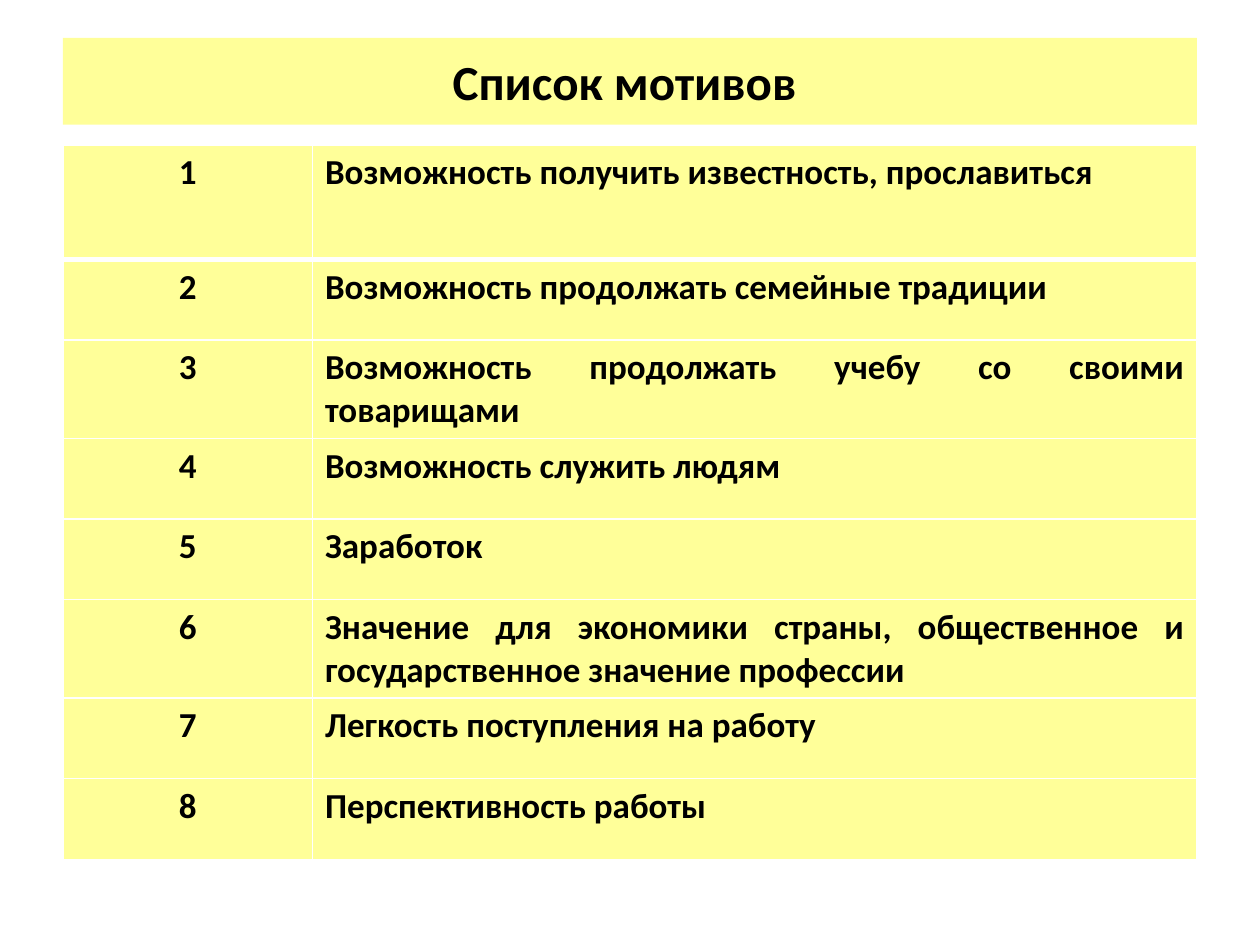
from typing import NamedTuple

from lxml.etree import SubElement
from pptx import Presentation
from pptx.dml.color import RGBColor
from pptx.enum.shapes import MSO_SHAPE
from pptx.enum.text import MSO_ANCHOR, PP_ALIGN
from pptx.oxml.ns import qn
from pptx.util import Inches, Pt

YELLOW = RGBColor(0xFF, 0xFF, 0x99)
WHITE = RGBColor(0xFF, 0xFF, 0xFF)
BLACK = RGBColor(0, 0, 0)
FONT = "Calibri"
LEFT, WIDTH = 0.5, 9
COLS = (1.98, 7.02)
FIRST, REST = 0.91, 0.64


class Motive(NamedTuple):
    rank: int
    text: str


MOTIVES = [Motive(*pair) for pair in enumerate((
    "Возможность получить известность, прославиться",
    "Возможность продолжать семейные традиции",
    "Возможность продолжать учебу со своими товарищами",
    "Возможность служить людям",
    "Заработок",
    "Значение для экономики страны, общественное и государственное значение профессии",
    "Легкость поступления на работу",
    "Перспективность работы",
), start=1)]


def write(frame, text: str, size: int, align) -> None:
    frame.text = text
    para = frame.paragraphs[0]
    para.alignment = align
    font = para.runs[0].font
    font.name, font.size, font.bold = FONT, Pt(size), True
    font.color.rgb = BLACK


def edge(cell, widths: dict[str, float]) -> None:
    props = cell._tc.get_or_add_tcPr()
    for side, width in widths.items():
        line = SubElement(props, qn(f"a:ln{side}"), w=str(Pt(width)))
        fill = SubElement(line, qn("a:solidFill"))
        SubElement(fill, qn("a:srgbClr"), val=str(WHITE))


def fill_cell(cell, text: str, align, top: float, base: float) -> None:
    write(cell.text_frame, text, 20, align)
    edge(cell, {"L": 1, "R": 1, "T": top, "B": base})
    cell.fill.solid()
    cell.fill.fore_color.rgb = YELLOW


def add_title(slide, text: str) -> None:
    box = slide.shapes.add_shape(
        MSO_SHAPE.RECTANGLE, Inches(LEFT), Inches(0.3), Inches(WIDTH), Inches(0.69))
    box.shadow.inherit = False
    box.fill.solid()
    box.fill.fore_color.rgb = YELLOW
    box.line.fill.background()
    box.text_frame.word_wrap = True
    box.text_frame.vertical_anchor = MSO_ANCHOR.MIDDLE
    write(box.text_frame, text, 28, PP_ALIGN.CENTER)


def add_list(slide, motives: list[Motive]) -> None:
    height = FIRST + REST * (len(motives) - 1)
    table = slide.shapes.add_table(
        len(motives), len(COLS), Inches(LEFT), Inches(1.15),
        Inches(WIDTH), Inches(height)).table
    table.horz_banding = False
    for column, width in zip(table.columns, COLS):
        column.width = Inches(width)
    for index, (row, motive) in enumerate(zip(table.rows, motives)):
        row.height = Inches(REST if index else FIRST)
        top = 3 if index == 1 else 1
        base = 1 if index else 3
        rank, text = row.cells
        fill_cell(rank, str(motive.rank), PP_ALIGN.CENTER, top, base)
        fill_cell(text, motive.text, PP_ALIGN.JUSTIFY, top, base)


def main() -> None:
    deck = Presentation()
    deck.slide_width, deck.slide_height = Inches(10), Inches(7.5)
    slide = deck.slides.add_slide(deck.slide_layouts[6])
    add_title(slide, "Список мотивов ")
    add_list(slide, MOTIVES)
    deck.save("out.pptx")


if __name__ == "__main__":
    main()
